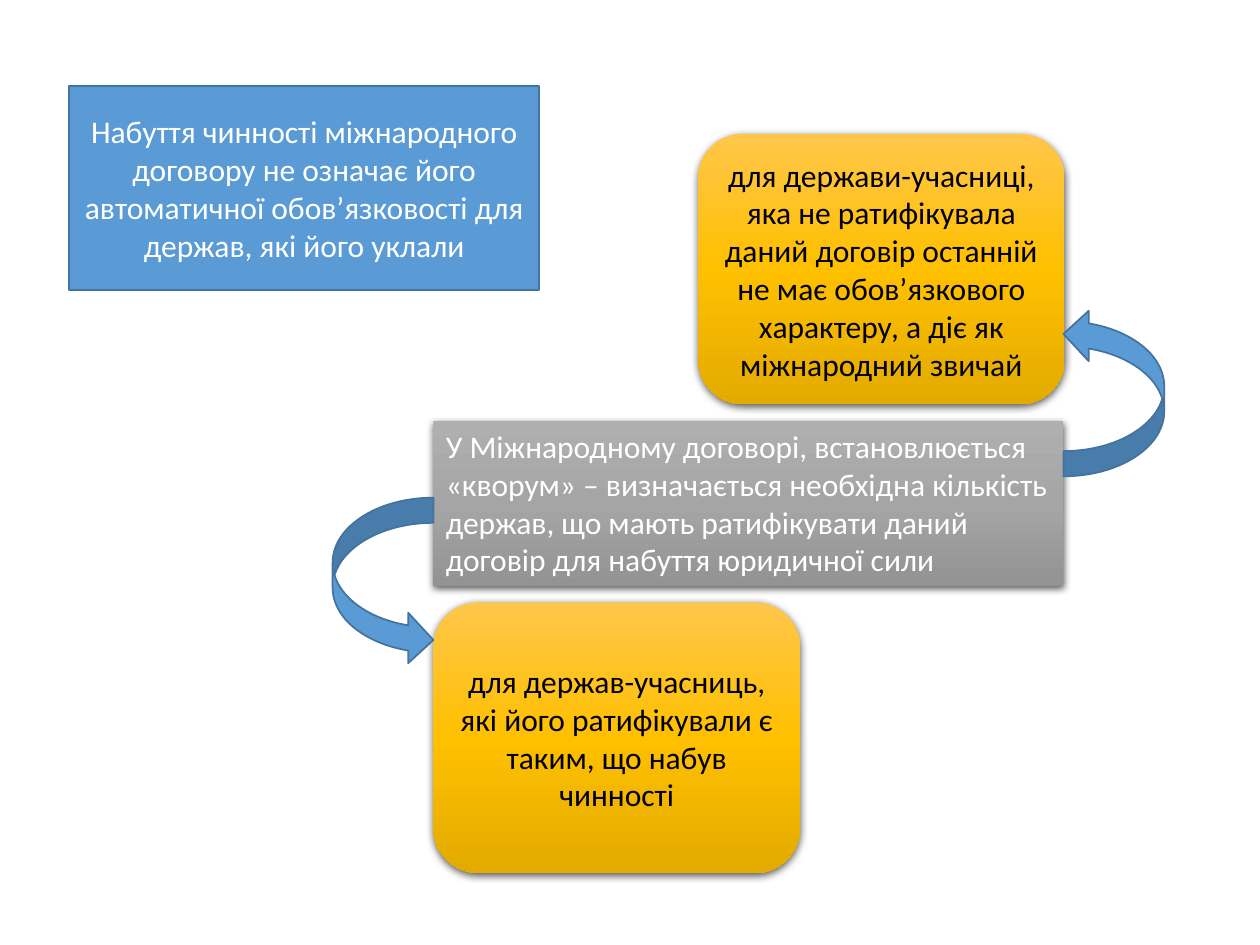
from copy import deepcopy
from dataclasses import dataclass

from lxml import etree
from pptx import Presentation
from pptx.dml.color import RGBColor
from pptx.enum.shapes import MSO_SHAPE
from pptx.enum.text import MSO_ANCHOR, MSO_AUTO_SIZE, PP_ALIGN
from pptx.oxml.ns import qn
from pptx.util import Inches, Pt

RECTANGLE = MSO_SHAPE.RECTANGLE
ROUNDED = MSO_SHAPE.FLOWCHART_ALTERNATE_PROCESS
CURVED_ARROW = MSO_SHAPE.CURVED_RIGHT_ARROW
TOP, MIDDLE = MSO_ANCHOR.TOP, MSO_ANCHOR.MIDDLE
LEFT, CENTER = PP_ALIGN.LEFT, PP_ALIGN.CENTER
FIT_SHAPE, NO_FIT = MSO_AUTO_SIZE.SHAPE_TO_FIT_TEXT, MSO_AUTO_SIZE.NONE


@dataclass(frozen=True)
class Theme:
    font: str = "Calibri"
    text_size: float = 18
    line_width: float = 1
    blue: str = "5B9BD5"
    outline: str = "43739E"
    light_text: str = "FFFFFF"
    dark_text: str = "000000"
    shadow: str = "000000"
    gray: tuple[str, ...] = ("AFAFAF", "A5A5A5", "939393")
    gold: tuple[str, ...] = ("FFC64B", "FFC000", "E3AB00")


THEME = Theme()


@dataclass(frozen=True)
class Box:
    text: str
    left: float
    top: float
    width: float
    height: float
    kind: MSO_SHAPE = ROUNDED
    colors: tuple[str, ...] = THEME.gold
    text_color: str = THEME.dark_text
    align: PP_ALIGN = CENTER
    anchor: MSO_ANCHOR = MIDDLE
    auto_size: MSO_AUTO_SIZE = NO_FIT


@dataclass(frozen=True)
class Arrow:
    left: float
    top: float
    rotation: float
    width: float = 0.8
    height: float = 1.33


BOXES = (
    Box("Набуття чинності міжнародного договору не означає його "
        "автоматичної обов’язковості для держав, які його уклали",
        0.55, 0.68, 3.73, 1.62, RECTANGLE, (THEME.blue,), THEME.light_text),
    Box("У Міжнародному договорі, встановлюється «кворум» – визначається "
        "необхідна кількість держав, що мають ратифікувати даний договір "
        "для набуття юридичної сили",
        3.44, 3.34, 5, 1.31, RECTANGLE, THEME.gray, THEME.light_text,
        LEFT, TOP, FIT_SHAPE),
    Box("для держави-учасниці, яка не ратифікувала даний договір останній "
        "не має обов’язкового характеру, а діє як міжнародний звичай",
        5.54, 1.06, 2.91, 2.15),
    Box("для держав-учасниць, які його ратифікували є таким, що набув чинності",
        3.44, 4.78, 2.91, 2.15),
)
ARROWS = (Arrow(2.64, 3.95, 0), Arrow(8.44, 2.45, 180))


def set_values(target, values: dict) -> None:
    for name, value in values.items():
        setattr(target, name, value)


def add_shape(slide, kind: MSO_SHAPE, item: Box | Arrow):
    shape = slide.shapes.add_shape(
        kind, Inches(item.left), Inches(item.top),
        Inches(item.width), Inches(item.height))
    shape.shadow.inherit = False
    return shape


def paint_flat(shape, color: str) -> None:
    shape.fill.solid()
    shape.fill.fore_color.rgb = RGBColor.from_string(color)
    shape.line.color.rgb = RGBColor.from_string(THEME.outline)
    shape.line.width = Pt(THEME.line_width)


def paint_gradient(shape, colors: tuple[str, ...]) -> None:
    shape.line.fill.background()
    shape.fill.gradient()
    shape.fill.gradient_angle = 270
    stops = shape.element.spPr.find(qn("a:gradFill")).find(qn("a:gsLst"))
    stops.insert(1, deepcopy(stops[0]))
    for index, stop in enumerate(shape.fill.gradient_stops):
        stop.position = index / (len(colors) - 1)
        stop.color.rgb = RGBColor.from_string(colors[index])


def add_shadow(shape) -> None:
    effects = shape.element.spPr.find(qn("a:effectLst"))
    shadow = etree.SubElement(
        effects, qn("a:outerShdw"), blurRad=str(Pt(4.5)), dist=str(Pt(1.5)),
        dir="5400000", algn="ctr", rotWithShape="0")
    color = etree.SubElement(shadow, qn("a:srgbClr"), val=THEME.shadow)
    etree.SubElement(color, qn("a:alpha"), val="63000")


def add_box(slide, box: Box) -> None:
    shape = add_shape(slide, box.kind, box)
    if len(box.colors) == 1:
        paint_flat(shape, box.colors[0])
    else:
        paint_gradient(shape, box.colors)
        add_shadow(shape)
    frame = shape.text_frame
    set_values(frame, {"word_wrap": True, "vertical_anchor": box.anchor,
                       "auto_size": box.auto_size})
    para = frame.paragraphs[0]
    para.alignment = box.align
    span = para.add_run()
    span.text = box.text
    set_values(span.font, {"name": THEME.font, "size": Pt(THEME.text_size)})
    span.font.color.rgb = RGBColor.from_string(box.text_color)


def add_arrow(slide, arrow: Arrow) -> None:
    shape = add_shape(slide, CURVED_ARROW, arrow)
    shape.rotation = arrow.rotation
    paint_flat(shape, THEME.blue)


def main() -> None:
    deck = Presentation()
    set_values(deck, {"slide_width": Inches(10), "slide_height": Inches(7.5)})
    page = deck.slides.add_slide(deck.slide_layouts[6])
    for box in BOXES:
        add_box(page, box)
    for arrow in ARROWS:
        add_arrow(page, arrow)
    deck.save("out.pptx")


if __name__ == "__main__":
    main()
